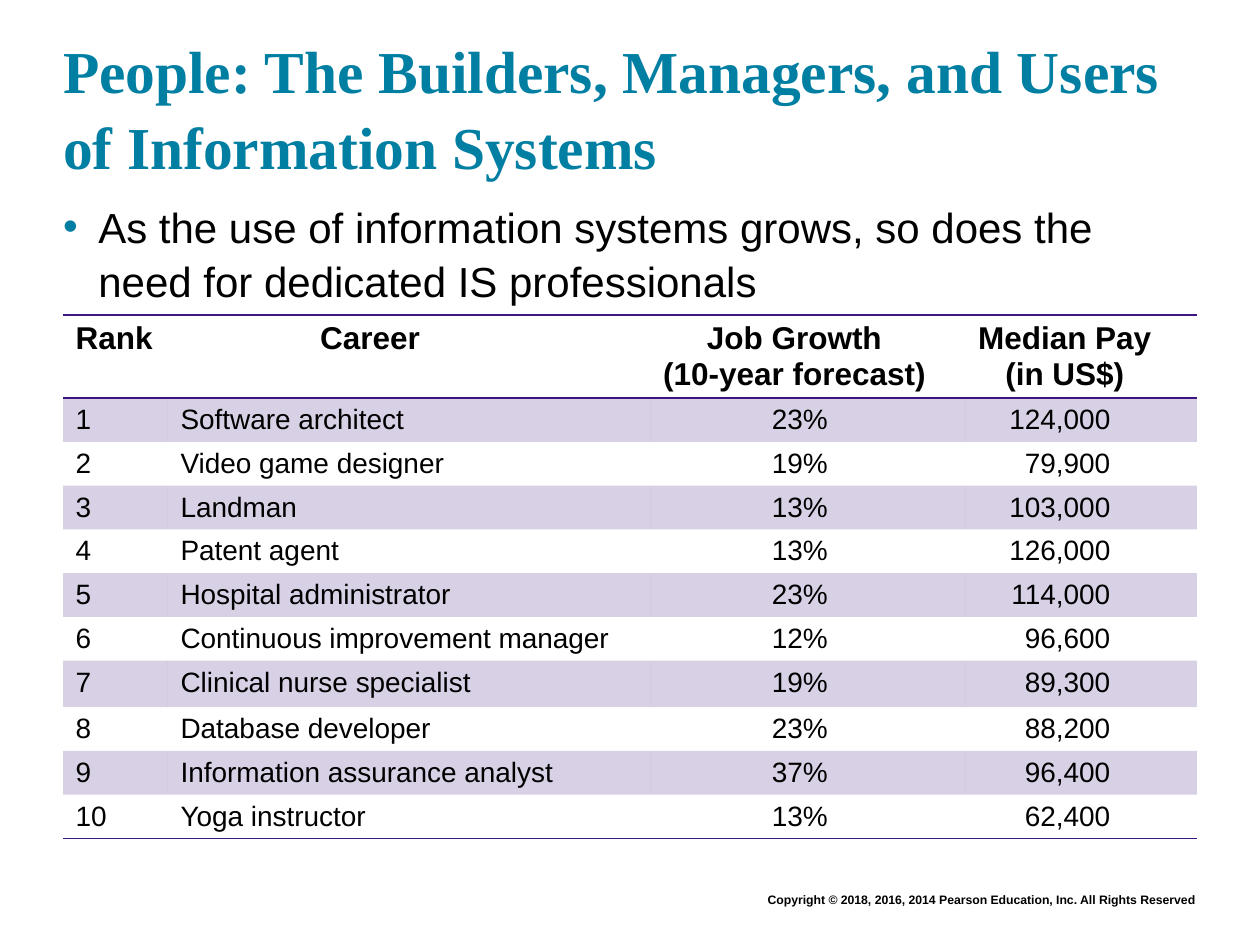
from lxml import etree
from pptx import Presentation
from pptx.dml.color import RGBColor
from pptx.enum.text import MSO_ANCHOR, MSO_AUTO_SIZE, PP_ALIGN
from pptx.oxml.ns import qn
from pptx.util import Pt

LEFT, CENTER, RIGHT = PP_ALIGN.LEFT, PP_ALIGN.CENTER, PP_ALIGN.RIGHT
COLORS = {"title": "007FA3", "text": "000000", "accent": "3C1581"}
HEADING_FONT, BODY_FONT = "Times New Roman", "Arial"
NO_STYLE = "{2D5ABB26-0587-4C30-8999-92F81FD0307C}"
COLUMN_WIDTHS = [60, 276, 180, 132]
HEADER_HEIGHT, ROW_HEIGHT, TALL_ROW_HEIGHT, TALL_ROW = 47.4, 25, 26.6, 7
HEADER_LAYOUT = [(LEFT, 7.2, 0), (LEFT, 87, 0), (CENTER, 4, 20), (CENTER, 4, 23)]
DATA_LAYOUT = [(LEFT, 7.2, 0), (LEFT, 7.2, 0), (CENTER, 4, 14), (RIGHT, 0, 49.5)]
HEADERS = ["Rank", "Career", "Job Growth\n(10-year forecast)", "Median Pay\n(in US$)"]
CAREERS = [
    ("Software architect", "23%", "124,000"),
    ("Video game designer", "19%", "79,900"),
    ("Landman", "13%", "103,000"),
    ("Patent agent", "13%", "126,000"),
    ("Hospital administrator", "23%", "114,000"),
    ("Continuous improvement manager", "12%", "96,600"),
    ("Clinical nurse specialist", "19%", "89,300"),
    ("Database developer", "23%", "88,200"),
    ("Information assurance analyst", "37%", "96,400"),
    ("Yoga instructor", "13%", "62,400"),
]


def rgb(name):
    """Return the named colour."""
    return RGBColor.from_string(COLORS[name])


def format_text(text_frame, size, color="text", font=BODY_FONT, bold=False, align=LEFT):
    """Format every run in a text frame."""
    for paragraph in text_frame.paragraphs:
        paragraph.alignment = align
        for run in paragraph.runs:
            run.font.size = Pt(size)
            run.font.name = font
            run.font.bold = bold
            run.font.color.rgb = rgb(color)


def fill_placeholder(shape, box, text, anchor):
    """Move a placeholder to its box and set its text without insets."""
    shape.left, shape.top, shape.width, shape.height = map(Pt, box)
    frame = shape.text_frame
    frame.text = text
    frame.word_wrap = True
    frame.auto_size = MSO_AUTO_SIZE.NONE
    frame.vertical_anchor = anchor
    frame.margin_left = frame.margin_right = frame.margin_top = frame.margin_bottom = 0
    paragraph = frame.paragraphs[0]
    paragraph.space_before = Pt(0)
    paragraph.line_spacing = 1.07
    return frame


def add_title(slide, box):
    """Place the slide title."""
    text = "People: The Builders, Managers, and Users of Information Systems"
    frame = fill_placeholder(slide.shapes.title, box, text, MSO_ANCHOR.BOTTOM)
    format_text(frame, 34, "title", HEADING_FONT, True)


def add_body(slide, box):
    """Place the bulleted statement."""
    text = "As the use of information systems grows, so does the need for dedicated IS professionals"
    frame = fill_placeholder(slide.placeholders[1], box, text, MSO_ANCHOR.TOP)
    properties = frame.paragraphs[0]._p.get_or_add_pPr()
    properties.set("marL", str(Pt(20.2)))
    properties.set("indent", str(-Pt(20.2)))
    bullet_color = etree.SubElement(properties, qn("a:buClr"))
    etree.SubElement(bullet_color, qn("a:srgbClr"), val=COLORS["title"])
    etree.SubElement(properties, qn("a:buFont"), typeface=BODY_FONT)
    etree.SubElement(properties, qn("a:buChar"), char="•")
    format_text(frame, 24)


def set_borders(cell, sides):
    """Draw accent lines on the given sides of a cell."""
    properties = cell._tc.get_or_add_tcPr()
    for position, side in enumerate(sides):
        line = etree.Element(qn(f"a:ln{side}"), w=str(Pt(1)))
        fill = etree.SubElement(line, qn("a:solidFill"))
        etree.SubElement(fill, qn("a:srgbClr"), val=COLORS["accent"])
        properties.insert(position, line)


def shade(cell):
    """Fill a cell with the accent colour at 20 percent opacity."""
    cell.fill.solid()
    cell.fill.fore_color.rgb = rgb("accent")
    color = cell._tc.tcPr.find(f".//{qn('a:srgbClr')}")
    etree.SubElement(color, qn("a:alpha"), val="20000")


def add_career_table(slide, box):
    """Place the ranked career table."""
    rows = [HEADERS] + [(str(rank), *career) for rank, career in enumerate(CAREERS, 1)]
    table = slide.shapes.add_table(len(rows), len(HEADERS), *map(Pt, box)).table
    table.horz_banding = False
    table._tbl.tblPr.find(qn("a:tableStyleId")).text = NO_STYLE
    for column, width in zip(table.columns, COLUMN_WIDTHS):
        column.width = Pt(width)
    for index, values in enumerate(rows):
        is_header = index == 0
        height = TALL_ROW_HEIGHT if index == TALL_ROW else ROW_HEIGHT
        table.rows[index].height = Pt(HEADER_HEIGHT if is_header else height)
        sides = "TB" if is_header else "B" if index == len(rows) - 1 else ""
        layout = HEADER_LAYOUT if is_header else DATA_LAYOUT
        for column, (value, (align, left, right)) in enumerate(zip(values, layout)):
            cell = table.cell(index, column)
            cell.text = value
            cell.margin_left, cell.margin_right = Pt(left), Pt(right)
            format_text(cell.text_frame, 18 if is_header else 16, bold=is_header, align=align)
            if index % 2:
                shade(cell)
            else:
                cell.fill.background()
            set_borders(cell, sides)


def add_copyright(slide, box):
    """Place the copyright line."""
    frame = slide.shapes.add_textbox(*map(Pt, box)).text_frame
    frame.word_wrap = True
    frame.text = "Copyright © 2018, 2016, 2014 Pearson Education, Inc. All Rights Reserved"
    format_text(frame, 7, bold=True, align=RIGHT)


def main():
    """Build and save the presentation."""
    presentation = Presentation()
    presentation.slide_width, presentation.slide_height = Pt(720), Pt(540)
    slide = presentation.slides.add_slide(presentation.slide_layouts[1])
    add_title(slide, (36, 17.3, 648, 86.4))
    add_body(slide, (36, 113, 648, 60))
    add_career_table(slide, (36, 180, 648, 299))
    add_copyright(slide, (126, 506.2, 564, 15.8))
    presentation.save("out.pptx")


if __name__ == "__main__":
    main()
